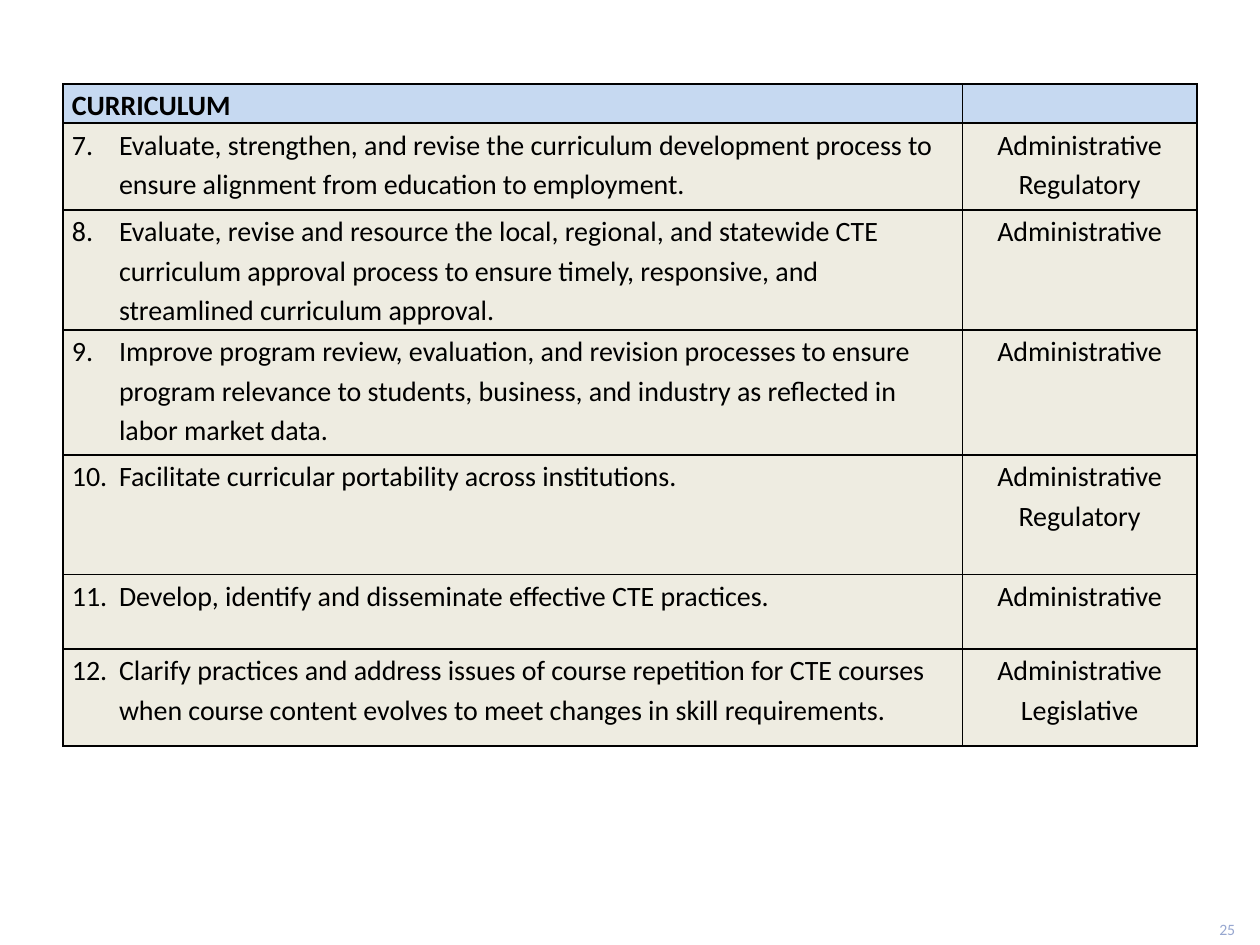
from lxml.etree import SubElement
from pptx import Presentation
from pptx.dml.color import RGBColor
from pptx.enum.text import MSO_ANCHOR as Anchor, PP_ALIGN as Align
from pptx.oxml.ns import qn
from pptx.util import Cm, Pt

THEME = {
    "font": "Calibri",
    "text": RGBColor(0x00, 0x00, 0x00),
    "header": RGBColor(0xC6, 0xD9, 0xF1),
    "body": RGBColor(0xEE, 0xEC, 0xE1),
    "page": RGBColor(0x97, 0xA7, 0xD0),
    "border": "000000",
    "table_size": Pt(16),
    "page_size": Pt(9),
}
HEADING = "CURRICULUM"
FIRST_NUMBER = 7
# Recommendation, kinds of action, row height in cm
RECOMMENDATIONS = [
    ("Evaluate, strengthen, and revise the curriculum development process to "
     "ensure alignment from education to employment.",
     ["Administrative", "Regulatory"], 1.75),
    ("Evaluate, revise and resource the local, regional, and statewide CTE "
     "curriculum approval process to ensure timely, responsive, and "
     "streamlined curriculum approval.", ["Administrative"], 2.42),
    ("Improve program review, evaluation, and revision processes to ensure "
     "program relevance to students, business, and industry as reflected in "
     "labor market data.", ["Administrative"], 2.52),
    ("Facilitate curricular portability across institutions.",
     ["Administrative", "Regulatory"], 2.41),
    ("Develop, identify and disseminate effective CTE practices.",
     ["Administrative"], 1.5),
    ("Clarify practices and address issues of course repetition for CTE courses "
     "when course content evolves to meet changes in skill requirements.",
     ["Administrative", "Legislative"], 1.95),
]
HEADER_HEIGHT = 0.79
COLUMN_WIDTHS = [18.13, 4.73]


def write(paragraph, text, size, color, bold=False):
    run = paragraph.add_run()
    run.text = text
    run.font.color.rgb = color
    for name, value in {"name": THEME["font"], "size": size, "bold": bold}.items():
        setattr(run.font, name, value)


def fill_cell(cell, lines, color, bold=False, align=Align.LEFT, indent=0, number=None):
    margins = {"margin_left": Cm(0.18), "margin_right": Cm(0.18),
               "margin_top": 0, "margin_bottom": 0}
    for name, value in margins.items():
        setattr(cell, name, value)
    # Borders come before the fill in the cell properties
    properties = cell._tc.get_or_add_tcPr()
    for side in ("a:lnL", "a:lnR", "a:lnT", "a:lnB"):
        line = SubElement(properties, qn(side), w=str(Pt(1)))
        line_fill = SubElement(line, qn("a:solidFill"))
        SubElement(line_fill, qn("a:srgbClr"), val=THEME["border"])
    cell.fill.solid()
    cell.fill.fore_color.rgb = color
    frame = cell.text_frame
    for index, text in enumerate(lines):
        paragraph = frame.add_paragraph() if index else frame.paragraphs[0]
        paragraph.alignment = align
        paragraph.line_spacing = 1.15
        paragraph_properties = paragraph._p.get_or_add_pPr()
        if indent:
            paragraph_properties.set("marL", str(Cm(indent)))
            paragraph_properties.set("indent", str(-Cm(indent)))
        if number is not None:
            SubElement(paragraph_properties, qn("a:buFont"), typeface="+mj-lt")
            SubElement(paragraph_properties, qn("a:buAutoNum"),
                       type="arabicPeriod", startAt=str(number))
        write(paragraph, text, THEME["table_size"], THEME["text"], bold)


presentation = Presentation()
presentation.slide_width = Cm(25.4)
presentation.slide_height = Cm(19.05)
slide = presentation.slides.add_slide(presentation.slide_layouts[6])

# Table grid
heights = [HEADER_HEIGHT] + [height for _, _, height in RECOMMENDATIONS]
table = slide.shapes.add_table(
    len(heights), len(COLUMN_WIDTHS), Cm(1.27), Cm(1.69),
    Cm(sum(COLUMN_WIDTHS)), Cm(sum(heights))).table
for column, width in zip(table.columns, COLUMN_WIDTHS):
    column.width = Cm(width)
for row, height in zip(table.rows, heights):
    row.height = Cm(height)

# Header row
fill_cell(table.cell(0, 0), [HEADING], THEME["header"], bold=True, indent=0.79)
fill_cell(table.cell(0, 1), [], THEME["header"])

# Numbered recommendations
for row, (text, actions, _) in enumerate(RECOMMENDATIONS, start=1):
    fill_cell(table.cell(row, 0), [text], THEME["body"], indent=0.95,
              number=FIRST_NUMBER + row - 1)
    fill_cell(table.cell(row, 1), actions, THEME["body"], align=Align.CENTER)

# Page number
page_box = slide.shapes.add_textbox(Cm(24.33), Cm(18.41), Cm(1.07), Cm(0.64))
page_box.text_frame.word_wrap = True
page_box.text_frame.vertical_anchor = Anchor.MIDDLE
write(page_box.text_frame.paragraphs[0], "25", THEME["page_size"], THEME["page"])

presentation.save("out.pptx")
